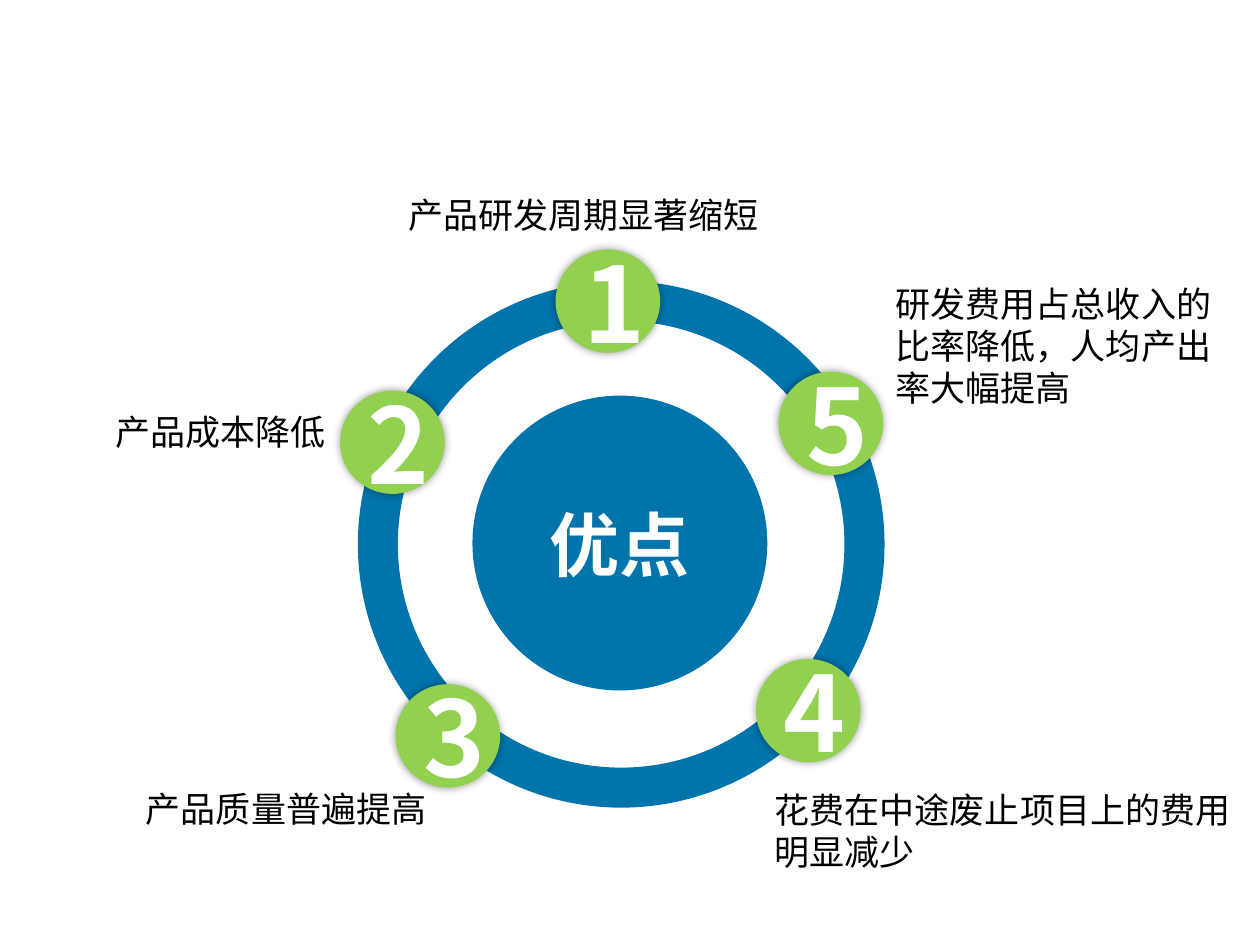
"""Build a ring diagram of five numbered advantages around a central disk."""
from lxml import etree
from pptx import Presentation
from pptx import util as u
from pptx.dml.color import RGBColor
from pptx.enum import shapes, text
from pptx.oxml import ns

BLUE = RGBColor(0x01, 0x74, 0xAB)
GREEN = RGBColor(0x92, 0xD1, 0x4F)
WHITE = RGBColor(0xFF, 0xFF, 0xFF)
BLACK = RGBColor(0x00, 0x00, 0x00)
DISK_FONT = "Noto Sans CJK SC"
LABEL_FONT = "Calibri"
BADGE_WIDTH, BADGE_HEIGHT = 0.83, 0.82

deck = Presentation()
deck.slide_width, deck.slide_height = u.Inches(10), u.Inches(7.5)
page = deck.slides.add_slide(deck.slide_layouts[6])


def add_disk(kind, left, top, width, height, color, wording="", size=40):
    disk = page.shapes.add_shape(kind, *map(u.Inches, (left, top, width, height)))
    disk.shadow.inherit = False
    disk.fill.solid()
    disk.fill.fore_color.rgb = color
    disk.line.fill.background()
    if wording:
        frame = disk.text_frame
        frame.text = wording
        frame.vertical_anchor = text.MSO_ANCHOR.MIDDLE
        para = frame.paragraphs[0]
        para.alignment = text.PP_ALIGN.CENTER
        style_span(para.runs[0], DISK_FONT, size, WHITE, True)
        east_asian = etree.SubElement(para.runs[0].font._element, ns.qn("a:ea"))
        east_asian.set("typeface", DISK_FONT)
    return disk


def style_span(span, font, size, color, bold=False):
    span.font.name = font
    span.font.size = u.Pt(size)
    span.font.color.rgb = color
    span.font.bold = bold


ring = add_disk(shapes.MSO_SHAPE.DONUT, 2.84, 2.23, 4.18, 4.18, BLUE)
ring.adjustments[0] = 0.076
add_disk(shapes.MSO_SHAPE.OVAL, 3.75, 3.14, 2.34, 2.34, BLUE, "优点")

advantages = [
    ((4.41, 1.98), (3.14, 1.49, 3.28, 0.44), "产品研发周期显著缩短"),
    ((2.7, 3.1), (0.82, 3.21, 1.88, 0.44), "产品成本降低"),
    ((3.14, 5.43), (1.06, 6.2, 3.86, 0.44), "产品质量普遍提高"),
    ((6, 5.23), (6.05, 6.21, 3.86, 0.77), "花费在中途废止项目上的费用明显减少"),
    ((6.18, 2.95), (7.01, 2.19, 2.79, 1.11),
     "研发费用占总收入的比率降低，人均产出率大幅提高"),
]

for number, (corner, area, wording) in enumerate(advantages, 1):
    badge = add_disk(shapes.MSO_SHAPE.OVAL, *corner, BADGE_WIDTH, BADGE_HEIGHT,
                     GREEN, str(number), 60)
    effects = badge._element.spPr.find(ns.qn("a:effectLst"))
    glow = etree.SubElement(effects, ns.qn("a:outerShdw"), blurRad=str(u.Pt(5)),
                            dist="0", dir="0", algn="ctr", rotWithShape="0")
    shade = etree.SubElement(glow, ns.qn("a:srgbClr"), val=str(BLACK))
    etree.SubElement(shade, ns.qn("a:alpha"), val="40000")

    box = page.shapes.add_textbox(*map(u.Inches, area))
    frame = box.text_frame
    frame.word_wrap = True
    frame.auto_size = text.MSO_AUTO_SIZE.SHAPE_TO_FIT_TEXT
    frame.text = wording
    style_span(frame.paragraphs[0].runs[0], LABEL_FONT, 20, BLACK)

deck.save("out.pptx")
